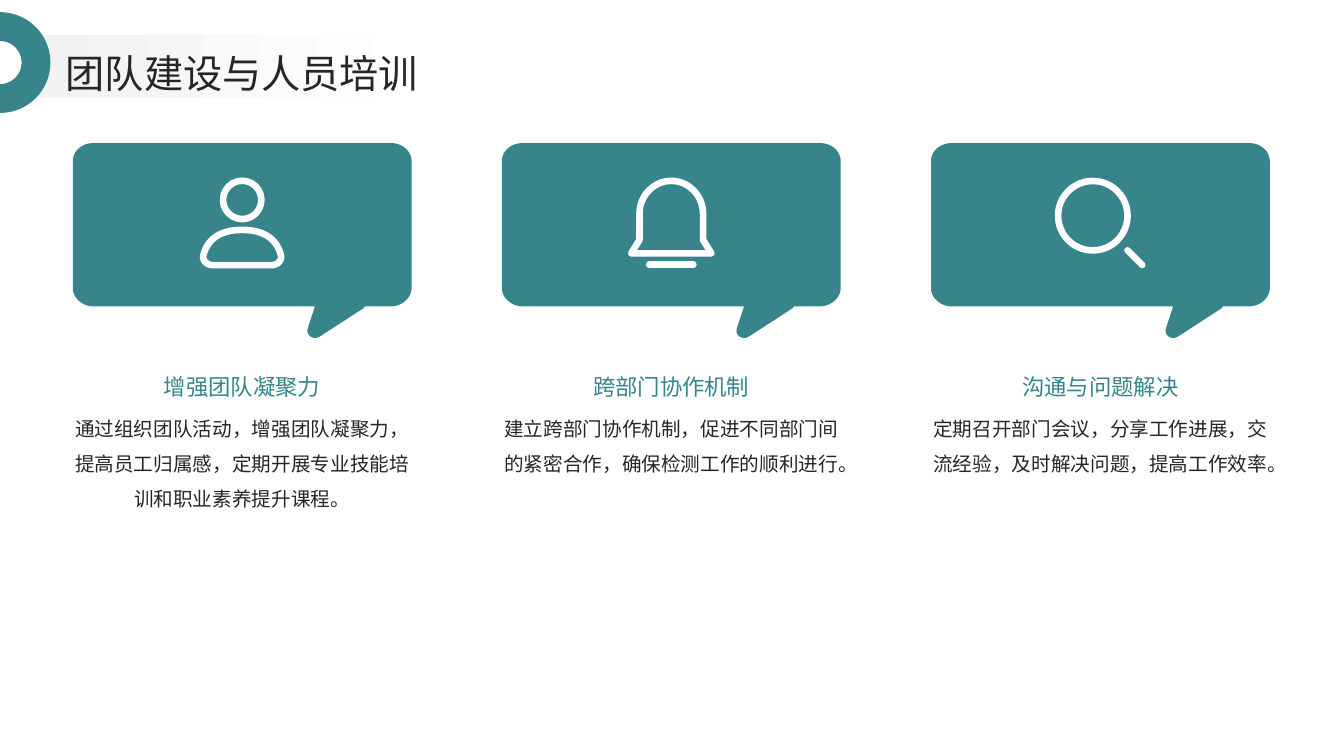
from lxml.etree import SubElement
from pptx import Presentation
from pptx.dml.color import RGBColor
from pptx.enum.shapes import MSO_CONNECTOR, MSO_SHAPE
from pptx.enum.text import MSO_ANCHOR, PP_ALIGN
from pptx.oxml.ns import qn
from pptx.util import Pt

FONT = "Noto Sans CJK SC"
TEAL, DARK, WHITE = "37858B", "262626", "FFFFFF"
STROKE = 4.7


def color(hex_string):
    return RGBColor.from_string(hex_string)


def text(s, x, y, w, h, words, size, hex_string, spacing,
         align=PP_ALIGN.CENTER, anchor=MSO_ANCHOR.TOP):
    tf = s.shapes.add_textbox(Pt(x), Pt(y), Pt(w), Pt(h)).text_frame
    tf.word_wrap = True
    tf.vertical_anchor = anchor
    tf.margin_left = tf.margin_right = tf.margin_top = tf.margin_bottom = 0
    p = tf.paragraphs[0]
    p.text = words
    p.alignment = align
    p.line_spacing = spacing
    p.font.size = Pt(size)
    p.font.color.rgb = color(hex_string)
    p.font.name = FONT
    SubElement(p._p.pPr.find(qn("a:defRPr")), qn("a:ea"), typeface=FONT)


def filled(sp, hex_string):
    sp.shadow.inherit = False
    sp.fill.solid()
    sp.fill.fore_color.rgb = color(hex_string)
    sp.line.fill.background()


def stroked(sp):
    """Give a white line with round caps and joins."""
    sp.line.color.rgb = color(WHITE)
    sp.line.width = Pt(STROKE)
    ln = sp.line._get_or_add_ln()
    ln.set("cap", "rnd")
    SubElement(ln, qn("a:round"))


def outline(s, x, y, start, steps):
    """Draw a closed outline; a step is a point or a Bezier of two controls and an end."""
    points = [start]
    for step in steps:
        if len(step) == 2:
            points.append(step)
            continue
        x0, y0 = points[-1]
        x1, y1, x2, y2, x3, y3 = step
        for i in range(1, 17):
            t = i / 16
            a, b, c, d = (1 - t) ** 3, 3 * t * (1 - t) ** 2, 3 * t * t * (1 - t), t ** 3
            points.append((a * x0 + b * x1 + c * x2 + d * x3,
                           a * y0 + b * y1 + c * y2 + d * y3))
    emu = [(Pt(x + px), Pt(y + py)) for px, py in points]
    builder = s.shapes.build_freeform(*emu[0], scale=1.0)
    builder.add_line_segments(emu[1:], close=True)
    return builder.convert_to_shape()


def stroked_outline(s, x, y, start, steps):
    sp = outline(s, x, y, start, steps)
    sp.shadow.inherit = False
    sp.fill.background()
    stroked(sp)


def ring(s, cx, cy, radius):
    sp = s.shapes.add_shape(MSO_SHAPE.OVAL, Pt(cx - radius), Pt(cy - radius),
                            Pt(2 * radius), Pt(2 * radius))
    sp.shadow.inherit = False
    sp.fill.background()
    stroked(sp)


def bar(s, x1, y1, x2, y2):
    sp = s.shapes.add_connector(MSO_CONNECTOR.STRAIGHT, Pt(x1), Pt(y1), Pt(x2), Pt(y2))
    stroked(sp)
    SubElement(sp._element.spPr, qn("a:effectLst"))


def person_icon(s, cx, top):
    ring(s, cx, top + 16, 13.7)
    stroked_outline(s, cx, top, (0, 37.4), [
        (18, 37.4, 25, 46, 27.5, 54.7), (29, 58.8, 25.5, 62.6, 20.9, 62.6),
        (-20.9, 62.6), (-25.5, 62.6, -29, 58.8, -27.5, 54.7),
        (-25, 46, -18, 37.4, 0, 37.4)])


def bell_icon(s, cx, top):
    stroked_outline(s, cx, top, (0, 2.4), [
        (12.5, 2.4, 22.7, 13, 22.7, 25.9), (22.7, 44.6), (28.7, 54.2),
        (-28.7, 54.2), (-22.7, 44.6), (-22.7, 25.9),
        (-22.7, 13, -12.5, 2.4, 0, 2.4)])
    bar(s, cx - 15.8, top + 62.3, cx + 15.8, top + 62.3)


def magnifier_icon(s, cx, top):
    ring(s, cx - 5.4, top + 27.3, 24.8)
    bar(s, cx + 19.4, top + 52, cx + 29.9, top + 62.5)


def bubble(s, x, y, w):
    h, rx, ry = 116.7, 15, 13
    filled(outline(s, x, y, (w - rx, 0), [
        (rx, 0), (6.5, 0, 0, 5.8, 0, ry), (0, h - ry),
        (0, h - 6.5, 6.5, h, rx, h), (w - 69, h), (w - 74.2, 132.5),
        (w - 75.6, 137.5, w - 70, 141.1, w - 65.5, 138.2),
        (w - 34.5, 118.1), (w - 33.8, 117.4, w - 33.8, h, w - 33, h),
        (w - rx, h), (w - 6.5, h, w, h - 6.5, w, h - ry),
        (w, ry), (w, 5.8, w - 6.5, 0, w - rx, 0)]), TEAL)


def topic(s, x, y, w, icon, heading, body):
    bubble(s, x, y, w)
    icon(s, x + w / 2, y + 24.6)
    text(s, x, y + 187, w, 198, body, 14, DARK, 1.5)
    text(s, x, y + 149, w, 34.5, heading, 16, TEAL, 1.3, anchor=MSO_ANCHOR.BOTTOM)


def header(s, x, y, w, h, title):
    band = s.shapes.add_shape(MSO_SHAPE.RECTANGLE, Pt(x), Pt(y), Pt(w), Pt(h))
    filled(band, WHITE)
    band.fill.gradient()
    band.fill.gradient_angle = 0
    for stop, (position, shade) in zip(band.fill.gradient_stops,
                                       [(0, "F2F2F2"), (0.8, WHITE)]):
        stop.position = position
        stop.color.rgb = color(shade)
    text(s, x + 23, y + 6.5, 855, 36.7, title, 28, DARK, 1.1,
         PP_ALIGN.LEFT, MSO_ANCHOR.MIDDLE)
    arc = s.shapes.add_shape(MSO_SHAPE.BLOCK_ARC, Pt(x - 60), Pt(y - 16.5), Pt(72), Pt(72))
    arc.rotation = 90
    for i, value in enumerate((108, 0, 0.285)):
        arc.adjustments[i] = value
    filled(arc, TEAL)


TOPICS = [
    (person_icon, "增强团队凝聚力",
     "通过组织团队活动，增强团队凝聚力，提高员工归属感，定期开展专业技能培训和职业素养提升课程。"),
    (bell_icon, "跨部门协作机制",
     "建立跨部门协作机制，促进不同部门间的紧密合作，确保检测工作的顺利进行。"),
    (magnifier_icon, "沟通与问题解决",
     "定期召开部门会议，分享工作进展，交流经验，及时解决问题，提高工作效率。"),
]


def main():
    prs = Presentation()
    prs.slide_width, prs.slide_height = Pt(960), Pt(540)
    s = prs.slides.add_slide(prs.slide_layouts[6])
    for i, (icon, heading, body) in enumerate(TOPICS):
        topic(s, 52 + i * 306.5, 102.2, 242, icon, heading, body)
    header(s, 24, 25.2, 354, 44.6, "团队建设与人员培训")
    prs.save("out.pptx")


if __name__ == "__main__":
    main()
